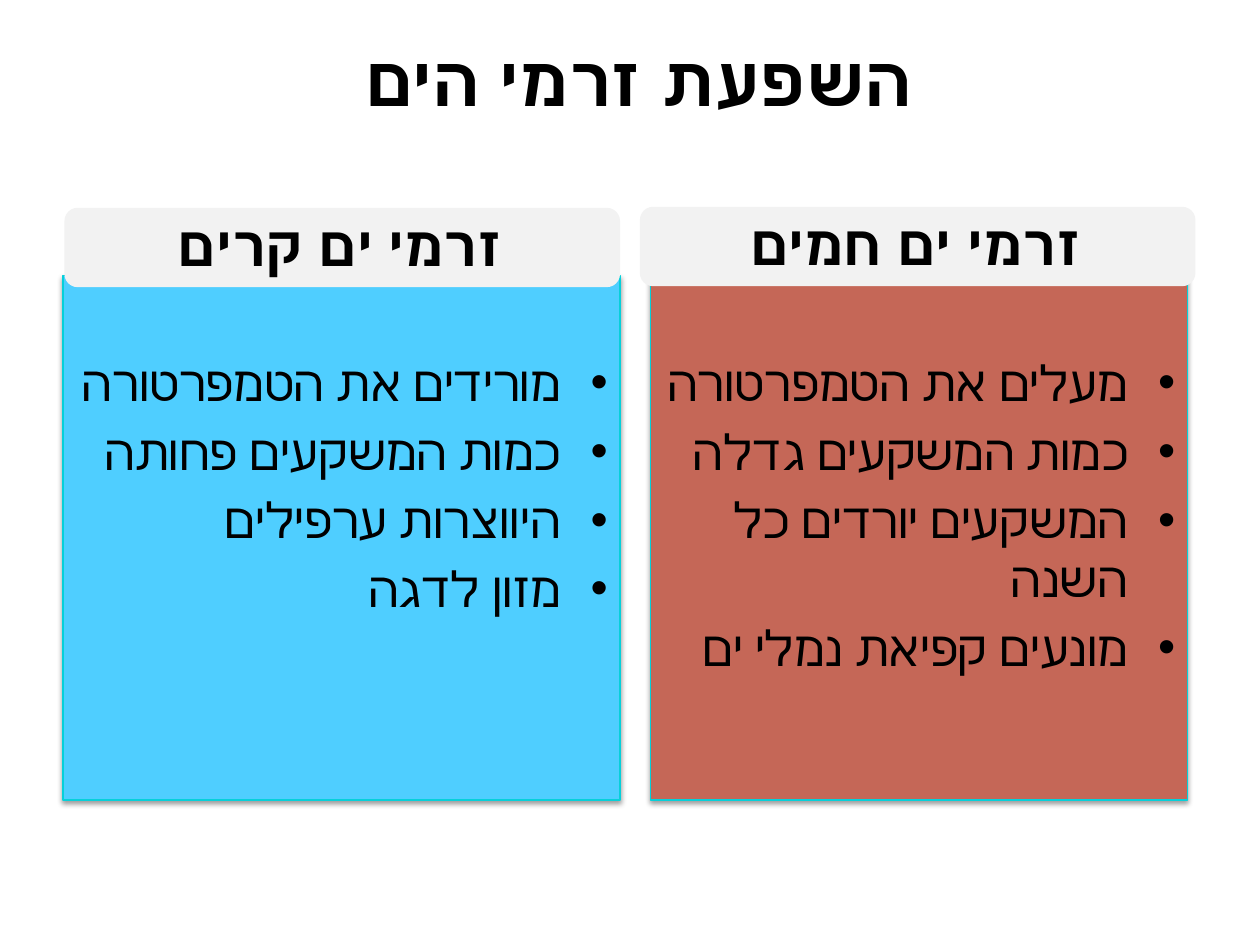
"""Build a slide that compares the effects of cold and warm sea currents."""
from dataclasses import dataclass

from lxml.etree import SubElement
from pptx import Presentation
from pptx.dml.color import RGBColor
from pptx.enum.shapes import MSO_SHAPE
from pptx.enum.text import MSO_ANCHOR, PP_ALIGN
from pptx.oxml.ns import qn
from pptx.util import Cm, Pt

BLACK = RGBColor(0x00, 0x00, 0x00)
GREY = RGBColor(0xF2, 0xF2, 0xF2)
BLUE = RGBColor(0x4F, 0xCE, 0xFF)
RED = RGBColor(0xC5, 0x67, 0x57)
TEAL = RGBColor(0x06, 0xD0, 0xD9)
FONT = "Calibri"


@dataclass
class Box:
    left: float
    top: float
    width: float
    height: float

    def place(self) -> tuple:
        return Cm(self.left), Cm(self.top), Cm(self.width), Cm(self.height)


@dataclass
class Panel:
    head: str
    items: list[str]
    fill: RGBColor
    body: Box
    tab: Box


PANELS = [
    Panel("זרמי ים קרים",
          ["מורידים את הטמפרטורה", "כמות המשקעים פחותה", "היווצרות ערפילים", "מזון לדגה"],
          BLUE, Box(1.27, 5.56, 11.23, 10.57), Box(1.3, 4.19, 11.2, 1.6)),
    Panel("זרמי ים חמים",
          ["מעלים את הטמפרטורה", "כמות המשקעים גדלה", "המשקעים יורדים כל השנה",
           "מונעים קפיאת נמלי ים"],
          RED, Box(13.12, 5.56, 10.82, 10.57), Box(12.9, 4.17, 11.2, 1.6)),
]


def add_run(para, text: str, size: int, bold: bool, align: PP_ALIGN) -> None:
    """Write one right-to-left run."""
    para.alignment = align
    para._p.get_or_add_pPr().set("rtl", "1")
    run = para.add_run()
    run.text = text
    font = run.font
    font.name, font.size, font.bold = FONT, Pt(size), bold
    font.color.rgb = BLACK
    run._r.get_or_add_rPr().set("lang", "he-IL")


def add_label(slide, box: Box, text: str, size: int, anchor: MSO_ANCHOR) -> None:
    """Add a bold centred text box."""
    frame = slide.shapes.add_textbox(*box.place()).text_frame
    frame.word_wrap = True
    frame.vertical_anchor = anchor
    add_run(frame.paragraphs[0], text, size, True, PP_ALIGN.CENTER)


def add_block(slide, kind: MSO_SHAPE, box: Box, fill: RGBColor):
    """Add a filled shape with no line and no shadow."""
    shape = slide.shapes.add_shape(kind, *box.place())
    shape.shadow.inherit = False
    shape.fill.solid()
    shape.fill.fore_color.rgb = fill
    shape.line.fill.background()
    return shape


def add_shade(shape) -> None:
    """Give a shape a soft shadow below."""
    effects = shape._element.spPr.find(qn("a:effectLst"))
    shade = SubElement(effects, qn("a:outerShdw"), blurRad=str(Pt(3.1)),
                       dist=str(Pt(1.6)), dir="5400000", rotWithShape="0")
    tint = SubElement(shade, qn("a:srgbClr"), val=str(BLACK))
    SubElement(tint, qn("a:alpha"), val="38000")


def add_body(slide, panel: Panel) -> None:
    """Add the coloured block with its bulleted list."""
    shape = add_block(slide, MSO_SHAPE.RECTANGLE, panel.body, panel.fill)
    shape.line.color.rgb = TEAL
    shape.line.width = Pt(0.75)
    add_shade(shape)
    frame = shape.text_frame
    frame.word_wrap = True
    frame.vertical_anchor = MSO_ANCHOR.TOP
    frame.margin_top, frame.margin_left = Cm(1.55), Cm(-0.2)
    for count, item in enumerate(panel.items):
        para = frame.add_paragraph() if count else frame.paragraphs[0]
        para.space_after = Pt(5.6)
        add_run(para, item, 28, False, PP_ALIGN.RIGHT)
        props = para._p.get_or_add_pPr()
        props.set("marL", str(Cm(0.95)))
        props.set("indent", str(Cm(-0.95)))
        SubElement(props, qn("a:buFont"), typeface="Arial")
        SubElement(props, qn("a:buChar"), char="•")


def add_head(slide, panel: Panel) -> None:
    """Add the rounded tab and its heading."""
    tab = panel.tab
    add_block(slide, MSO_SHAPE.ROUNDED_RECTANGLE, tab, GREY)
    label = Box(tab.left + 0.4, tab.top - 0.08, tab.width - 0.88, 1.62)
    add_label(slide, label, panel.head, 32, MSO_ANCHOR.TOP)


def main() -> None:
    """Build and save the slide."""
    deck = Presentation()
    deck.slide_width, deck.slide_height = Cm(25.4), Cm(19.05)
    slide = deck.slides.add_slide(deck.slide_layouts[6])
    add_label(slide, Box(1.45, 0, 22.86, 3.18), "השפעת זרמי הים", 40, MSO_ANCHOR.MIDDLE)
    for draw in (add_body, add_head):
        for panel in PANELS:
            draw(slide, panel)
    deck.save("out.pptx")


if __name__ == "__main__":
    main()
